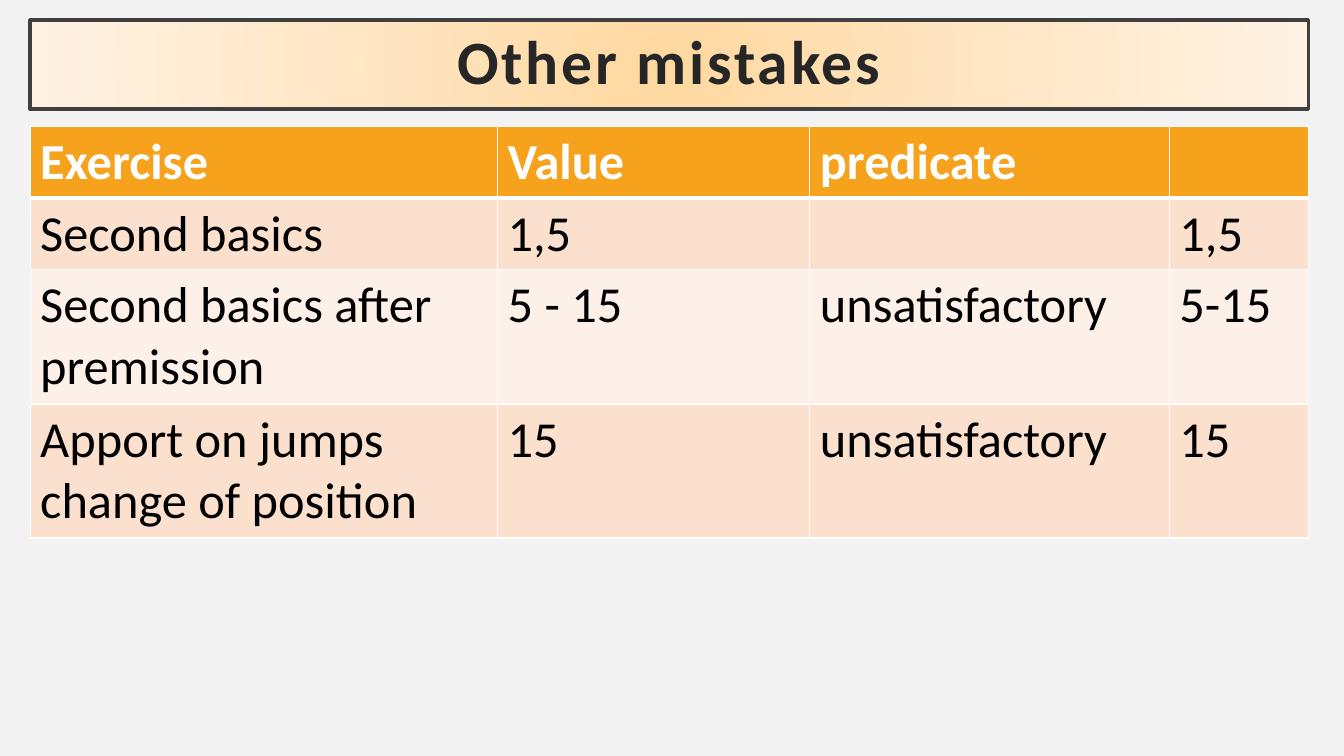
"""Builds the slide "Other mistakes": a framed title above a table of exercises."""
from pptx import Presentation
from pptx.dml.color import RGBColor
from pptx.enum.text import MSO_ANCHOR, MSO_AUTO_SIZE, PP_ALIGN
from pptx.oxml import parse_xml
from pptx.oxml.ns import nsdecls
from pptx.util import Cm, Pt

CENTER, LEFT = PP_ALIGN.CENTER, PP_ALIGN.LEFT
MIDDLE = MSO_ANCHOR.MIDDLE
NO_AUTOFIT = MSO_AUTO_SIZE.NONE
TITLE_ONLY = 5
FONT = "Calibri"
MARGIN, CONTENT_WIDTH = 0.76, 32.21
TITLE_STOPS = [(0, "FFD8A0"), (50, "FFE6C5"), (100, "FFF2E3")]
HEADER_FILL, BAND_FILLS = "F6A21D", ["FBE0CD", "FDF0E8"]
COLUMN_WIDTHS = [11.78, 7.87, 9.06, 3.5]
ROW_HEIGHTS = [1.8, 1.8, 3.38, 3.38]
ROWS = [
    ["Exercise", "Value", "predicate", ""],
    ["Second basics", "1,5", "", "1,5"],
    ["Second basics after premission", "5 - 15", "unsatisfactory", "5-15"],
    ["Apport on jumps change of position", "15", "unsatisfactory", "15"],
]


def color(value):
    return RGBColor.from_string(value)


def write(frame, text, size, fill, bold=False, align=LEFT, line_spacing=1.0, tracking=0):
    para = frame.paragraphs[0]
    para.alignment = align
    para.line_spacing = line_spacing
    span = para.add_run()
    span.text = text
    span.font.name = FONT
    span.font.size = Pt(size)
    span.font.bold = bold
    span.font.color.rgb = color(fill)
    if tracking:
        span.font._element.set("spc", str(tracking * 100))


def fill_radial(box, stops):
    marks = "".join(
        f'<a:gs pos="{position * 1000}"><a:srgbClr val="{value}"/></a:gs>'
        for position, value in stops
    )
    box._element.spPr.append(parse_xml(
        f'<a:gradFill {nsdecls("a")} rotWithShape="1"><a:gsLst>{marks}</a:gsLst>'
        '<a:path path="circle"><a:fillToRect l="50000" t="50000" r="50000" b="50000"/>'
        '</a:path></a:gradFill>'
    ))


def format_title(box, text):
    box.left, box.top = Cm(MARGIN), Cm(0.51)
    box.width, box.height = Cm(CONTENT_WIDTH), Cm(2.24)
    fill_radial(box, TITLE_STOPS)
    box.line.color.rgb = color("404040")
    box.line.width = Pt(2.5)
    frame = box.text_frame
    frame.word_wrap = True
    frame.auto_size = NO_AUTOFIT
    frame.vertical_anchor = MIDDLE
    frame.margin_left = frame.margin_right = Cm(0.51)
    frame.margin_top = frame.margin_bottom = Cm(0.51)
    write(frame, text, 44, "262626", bold=True, align=CENTER, line_spacing=0.9, tracking=2)


def set_borders(cell, top=1, bottom=1):
    properties = cell._tc.get_or_add_tcPr()
    widths = {"lnL": 1, "lnR": 1, "lnT": top, "lnB": bottom}
    for index, (side, width) in enumerate(widths.items()):
        properties.insert(index, parse_xml(
            f'<a:{side} {nsdecls("a")} w="{Pt(width)}"><a:solidFill>'
            f'<a:srgbClr val="FFFFFF"/></a:solidFill></a:{side}>'
        ))


def add_exercise_table(page):
    table = page.shapes.add_table(
        len(ROWS), len(COLUMN_WIDTHS), Cm(MARGIN), Cm(3.18),
        Cm(CONTENT_WIDTH), Cm(sum(ROW_HEIGHTS)),
    ).table
    for column, width in zip(table.columns, COLUMN_WIDTHS):
        column.width = Cm(width)
    for number, (row, height, texts) in enumerate(zip(table.rows, ROW_HEIGHTS, ROWS)):
        row.height = Cm(height)
        header = number == 0
        for cell, text in zip(row.cells, texts):
            cell.fill.solid()
            cell.fill.fore_color.rgb = color(HEADER_FILL if header else BAND_FILLS[(number - 1) % 2])
            set_borders(cell, top=3 if number == 1 else 1, bottom=3 if header else 1)
            if text:
                write(cell.text_frame, text, 36, "FFFFFF" if header else "000000", bold=header)


def main():
    deck = Presentation()
    deck.slide_width, deck.slide_height = Cm(33.87), Cm(19.05)
    page = deck.slides.add_slide(deck.slide_layouts[TITLE_ONLY])
    page.background.fill.solid()
    page.background.fill.fore_color.rgb = color("F2F2F2")
    format_title(page.shapes.title, "Other mistakes")
    add_exercise_table(page)
    deck.save("out.pptx")


if __name__ == "__main__":
    main()
